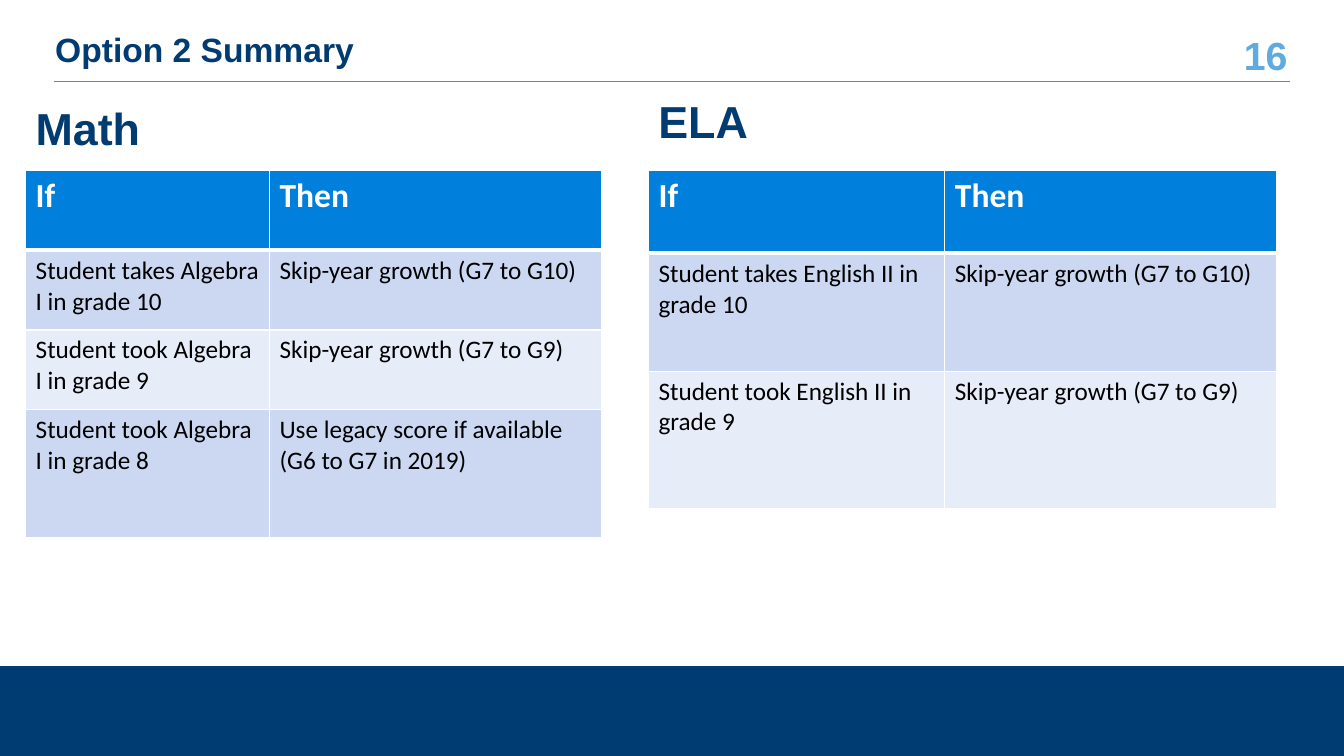
from lxml.etree import SubElement as Sub
from pptx import Presentation
from pptx.dml.color import RGBColor as RGB
from pptx.enum.shapes import MSO_CONNECTOR as CONN, MSO_SHAPE as SHAPE
from pptx.enum.text import MSO_ANCHOR as ANCHOR, PP_ALIGN as ALIGN
from pptx.oxml.ns import qn
from pptx.util import Pt

COLORS = {
    "navy": "003B71", "sky": "5FAADE", "blue": "007FDC", "gray": "808080",
    "mid": "CCD8F2", "pale": "E7ECF9", "white": "FFFFFF", "black": "000000",
}


class Deck:
    """Holds the style and the current slide."""

    def __init__(self, wide, high):
        self.prs = Presentation()
        self.prs.slide_width, self.prs.slide_height = Pt(wide), Pt(high)
        self.slide = self.prs.slides.add_slide(self.prs.slide_layouts[6])
        self.shapes = self.slide.shapes

    def color(self, name):
        return RGB.from_string(COLORS[name])

    def add_run(self, para, text, size, color, font, bold):
        run = para.add_run()
        run.text = text
        run.font.size, run.font.name, run.font.bold = Pt(size), font, bold
        run.font.color.rgb = self.color(color)

    def text(self, box, text, size, color="navy", align=ALIGN.LEFT, space=1.0):
        frame = self.shapes.add_textbox(*map(Pt, box)).text_frame
        frame.word_wrap = True
        frame.vertical_anchor = ANCHOR.MIDDLE
        para = frame.paragraphs[0]
        para.alignment, para.line_spacing = align, space
        self.add_run(para, text, size, color, "Arial", True)

    def rect(self, box, color):
        rect = self.shapes.add_shape(SHAPE.RECTANGLE, *map(Pt, box))
        rect.shadow.inherit = False
        rect.fill.solid()
        rect.fill.fore_color.rgb = self.color(color)
        rect.line.fill.background()

    def line(self, ends, color, width):
        line = self.shapes.add_connector(CONN.STRAIGHT, *map(Pt, ends))
        line.line.color.rgb = self.color(color)
        line.line.width = Pt(width)
        Sub(line._element.spPr, qn("a:effectLst"))

    def edge(self, cell, side, width):
        props = cell._tc.get_or_add_tcPr()
        edge = Sub(props, qn("a:ln" + side), w=str(Pt(width)))
        fill = Sub(edge, qn("a:solidFill"))
        Sub(fill, qn("a:srgbClr"), val=COLORS["white"])

    def table(self, left, top, cols, rows, data):
        box = map(Pt, (left, top, sum(cols), sum(rows)))
        table = self.shapes.add_table(len(rows), len(cols), *box).table
        for col, width in zip(table.columns, cols):
            col.width = Pt(width)
        for r, (row, high, texts) in enumerate(zip(table.rows, rows, data)):
            row.height = Pt(high)
            for cell, text in zip(row.cells, texts):
                # The rule under the header is thicker than the others
                thick = {"T": r == 1, "B": r == 0}
                for side in "LRTB":
                    self.edge(cell, side, 3 if thick.get(side) else 1)
                cell.fill.solid()
                fill = "blue" if r == 0 else "mid" if r % 2 else "pale"
                cell.fill.fore_color.rgb = self.color(fill)
                size, color = (24, "white") if r == 0 else (18, "black")
                para = cell.text_frame.paragraphs[0]
                self.add_run(para, text, size, color, "Calibri", r == 0)


def main():
    deck = Deck(960, 540)

    # Footer band, page number and header
    deck.rect((0, 475.8, 960, 64.2), "navy")
    deck.text((869, 23.8, 57.6, 30.2), "16", 28, "sky", ALIGN.RIGHT)
    deck.line((921.6, 57.8, 38.6, 57.8), "gray", 0.5)
    deck.text((32.4, 21.6, 835.2, 30.2), "Option 2 Summary", 24, space=0.9)

    # Subject tables
    head = ("If", "Then")
    deck.table(18.3, 121.9, (174.2, 237.5), (56.9, 56.9, 56.9, 91.4), (
        head,
        ("Student takes Algebra I in grade 10", "Skip-year growth (G7 to G10)"),
        ("Student took Algebra I in grade 9", "Skip-year growth (G7 to G9)"),
        ("Student took Algebra I in grade 8",
         "Use legacy score if available (G6 to G7 in 2019)"),
    ))
    deck.table(463.2, 121.9, (211.7, 236.8), (59, 84.2, 97.9), (
        head,
        ("Student takes English II in grade 10", "Skip-year growth (G7 to G10)"),
        ("Student took English II in grade 9", "Skip-year growth (G7 to G9)"),
    ))

    # Subject headings
    for left, top, name in ((18.3, 74.9, "Math"), (463.2, 69.8, "ELA")):
        deck.text((left, top, 221.8, 33.1), name, 32)

    deck.prs.save("out.pptx")


if __name__ == "__main__":
    main()
